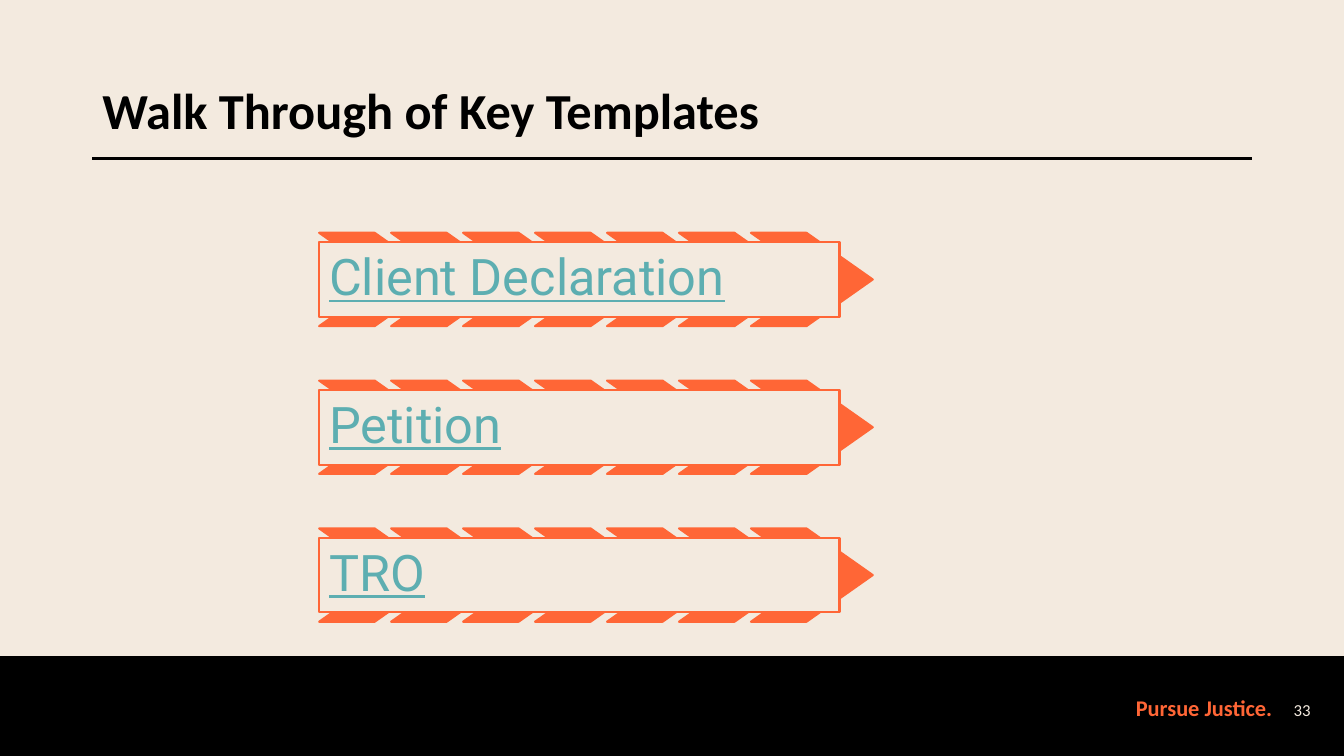
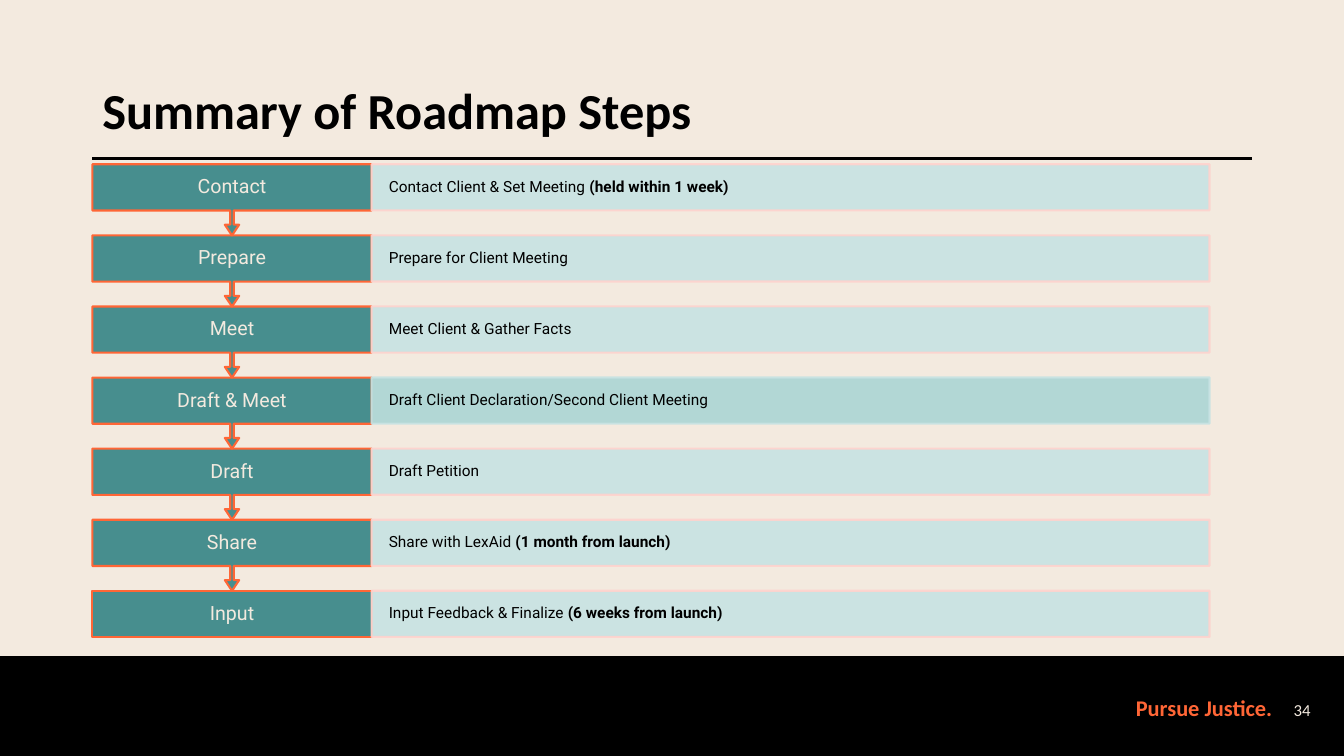
from dataclasses import dataclass

from lxml import etree
from pptx import Presentation, util as u
from pptx.dml.color import RGBColor
from pptx.enum import shapes, text
from pptx.oxml.ns import qn

CREAM, BLACK, ORANGE = "F3EADF", "000000", "FF6636"
TEAL, LINK = "478E8E", "5DAEB1"
PALE, BLUSH, ACCENT = "C7E3E3", "FFD3CE", "ABD5D5"
HEAD_FONT, BODY_FONT = "Calibri", "Roboto"
COLUMNS, ROWS = 160, 90
WIDTH, HEIGHT = u.Inches(13.33), u.Inches(7.5)
COL, ROW = WIDTH / COLUMNS, HEIGHT / ROWS
SHAPE, ALIGN = shapes.MSO_SHAPE, text.PP_ALIGN

TEMPLATES = ["Client Declaration", "Petition", "TRO"]
STEPS = [
    ("Contact", "Contact Client & Set Meeting ", "(held within 1 week)"),
    ("Prepare", "Prepare for Client Meeting", ""),
    ("Meet", "Meet Client & Gather Facts", ""),
    ("Draft & Meet", "Draft Client Declaration/Second Client Meeting", ""),
    ("Draft", "Draft Petition", ""),
    ("Share", "Share with LexAid ", "(1 month from launch)"),
    ("Input", "Input Feedback & Finalize ", "(6 weeks from launch)"),
]
HIGHLIGHT = "Draft & Meet"


@dataclass
class Box:
    """A rectangle in grid columns and rows."""

    x: float
    y: float
    w: float
    h: float

    def inner(self, x, y, w, h):
        """Return an inner box given as shares of this one."""
        return Box(self.x + x * self.w, self.y + y * self.h, w * self.w, h * self.h)

    def place(self):
        """Return left, top, width and height as lengths."""
        return [u.Emu(round(n)) for n in
                (self.x * COL, self.y * ROW, self.w * COL, self.h * ROW)]


def color(hex_code):
    """Turn a hex string into a colour."""
    return RGBColor.from_string(hex_code)


def add_block(slide, box, kind, fill, line=None, adjust=(), opacity=100):
    """Add a filled preset shape without shadow."""
    block = slide.shapes.add_shape(kind, *box.place())
    block.shadow.inherit = False
    for index, value in enumerate(adjust):
        block.adjustments[index] = value
    block.fill.solid()
    block.fill.fore_color.rgb = color(fill)
    if line:
        block.line.color.rgb = color(line)
        block.line.width = u.Pt(1.5)
    else:
        block.line.fill.background()
    if opacity < 100:
        for tint in block._element.spPr.iter(qn("a:srgbClr")):
            etree.SubElement(tint, qn("a:alpha"), val=str(opacity * 1000))
    return block


def write(shape, runs, size, font, ink, align=ALIGN.LEFT, inset=0.1, spacing=0.9):
    """Write one vertically centred paragraph and return it."""
    frame = shape.text_frame
    frame.word_wrap = True
    frame.vertical_anchor = text.MSO_ANCHOR.MIDDLE
    frame.margin_left = frame.margin_right = u.Inches(inset)
    frame.margin_top = frame.margin_bottom = 0
    line = frame.paragraphs[0]
    line.alignment, line.line_spacing = align, spacing
    for words in runs:
        line.add_run().text = words
    line.font.name, line.font.size = font, u.Pt(size)
    line.font.color.rgb = color(ink)
    return line


def add_footer(slide, box, number):
    """Add the black band with the slogan and page number."""
    add_block(slide, box, SHAPE.RECTANGLE, BLACK)
    label = slide.shapes.add_textbox(*box.inner(0.79, 0.32, 0.2, 0.38).place())
    line = label.text_frame.paragraphs[0]
    line.line_spacing = 1
    stops = etree.SubElement(line._p.get_or_add_pPr(), qn("a:tabLst"))
    for inches in (1.99, 2.37):
        etree.SubElement(stops, qn("a:tab"), pos=str(u.Inches(inches)), algn="r")
    write(label, ["\tPursue Justice.", f"\t{number}"], 16, HEAD_FONT, ORANGE, spacing=1)
    slogan, page = line.runs
    slogan.font.bold = True
    page.font.size = u.Pt(12)
    page.font.color.rgb = color(CREAM)


def add_heading(slide, box, title):
    """Add the title and the rule below it."""
    heading = slide.shapes.add_textbox(*box.place())
    write(heading, [title], 36, HEAD_FONT, BLACK).font.bold = True
    left, top, width, _ = box.inner(0, 0.81, 1, 0).place()
    rule = slide.shapes.add_connector(
        shapes.MSO_CONNECTOR.STRAIGHT, left, top, left + width, top)
    rule.line.color.rgb = color(BLACK)
    rule.line.width = u.Pt(2.5)
    etree.SubElement(rule._element.spPr, qn("a:effectLst"))


def add_page(deck, title, number):
    """Add a slide with the shared background, footer and heading."""
    slide = deck.slides.add_slide(deck.slide_layouts[6])
    slide.background.fill.solid()
    slide.background.fill.fore_color.rgb = color(CREAM)
    add_footer(slide, Box(0, 78.12, COLUMNS, ROWS - 78.12), number)
    add_heading(slide, Box(11, 4.8, 138, 17.4), title)
    return slide


def add_arrow_banner(slide, box, name, chevrons=7, share=0.22):
    """Add a framed label over a row of chevrons."""
    pitch = (1 - share) / (chevrons - 1)
    for index in range(chevrons):
        add_block(slide, box.inner(index * pitch, 0, share, 1),
                  SHAPE.CHEVRON, ORANGE, ORANGE, [0.71])
    label = add_block(slide, box.inner(0, 0.1, 0.94, 0.8), SHAPE.RECTANGLE, CREAM, ORANGE)
    write(label, [name], 36, BODY_FONT, LINK).font.underline = True


def add_templates(slide, box):
    """Stack the template banners at equal distances."""
    gap = 0.14
    height = (1 - gap * (len(TEMPLATES) - 1)) / len(TEMPLATES)
    for index, name in enumerate(TEMPLATES):
        add_arrow_banner(slide, box.inner(0, index * (height + gap), 1, height), name)


def add_roadmap(slide, box, body=0.65, split=0.25):
    """Add the chain of steps, each beside its detail."""
    last = len(STEPS) - 1
    pitch = 1 / (last + body)
    for index, (name, action, deadline) in reversed(list(enumerate(STEPS))):
        top, height = index * pitch, body * pitch
        if index == last:
            step = add_block(slide, box.inner(0, top, split, height),
                             SHAPE.RECTANGLE, TEAL, ORANGE)
        else:
            step = add_block(slide, box.inner(0, top, split, pitch),
                             SHAPE.DOWN_ARROW_CALLOUT, TEAL, ORANGE,
                             [0.05, 0.1, 0.15, body])
        write(step, [name], 14, BODY_FONT, CREAM, ALIGN.CENTER)
        fill, edge = (ACCENT, PALE) if name == HIGHLIGHT else (PALE, BLUSH)
        detail = add_block(slide, box.inner(split, top, 1 - split, height),
                           SHAPE.RECTANGLE, fill, edge, opacity=90)
        runs = [action, deadline] if deadline else [action]
        line = write(detail, runs, 11, BODY_FONT, BLACK, inset=0.17)
        for due in line.runs[1:]:
            due.font.bold = True


def main():
    """Build and save the deck."""
    deck = Presentation()
    deck.slide_width, deck.slide_height = WIDTH, HEIGHT
    add_templates(add_page(deck, "Walk Through of Key Templates", 33),
                  Box(38, 27.72, 65.9, 46.3))
    add_roadmap(add_page(deck, "Summary of Roadmap Steps", 34),
                Box(11, 19.56, 133, 56.28))
    deck.save("out.pptx")


if __name__ == "__main__":
    main()
